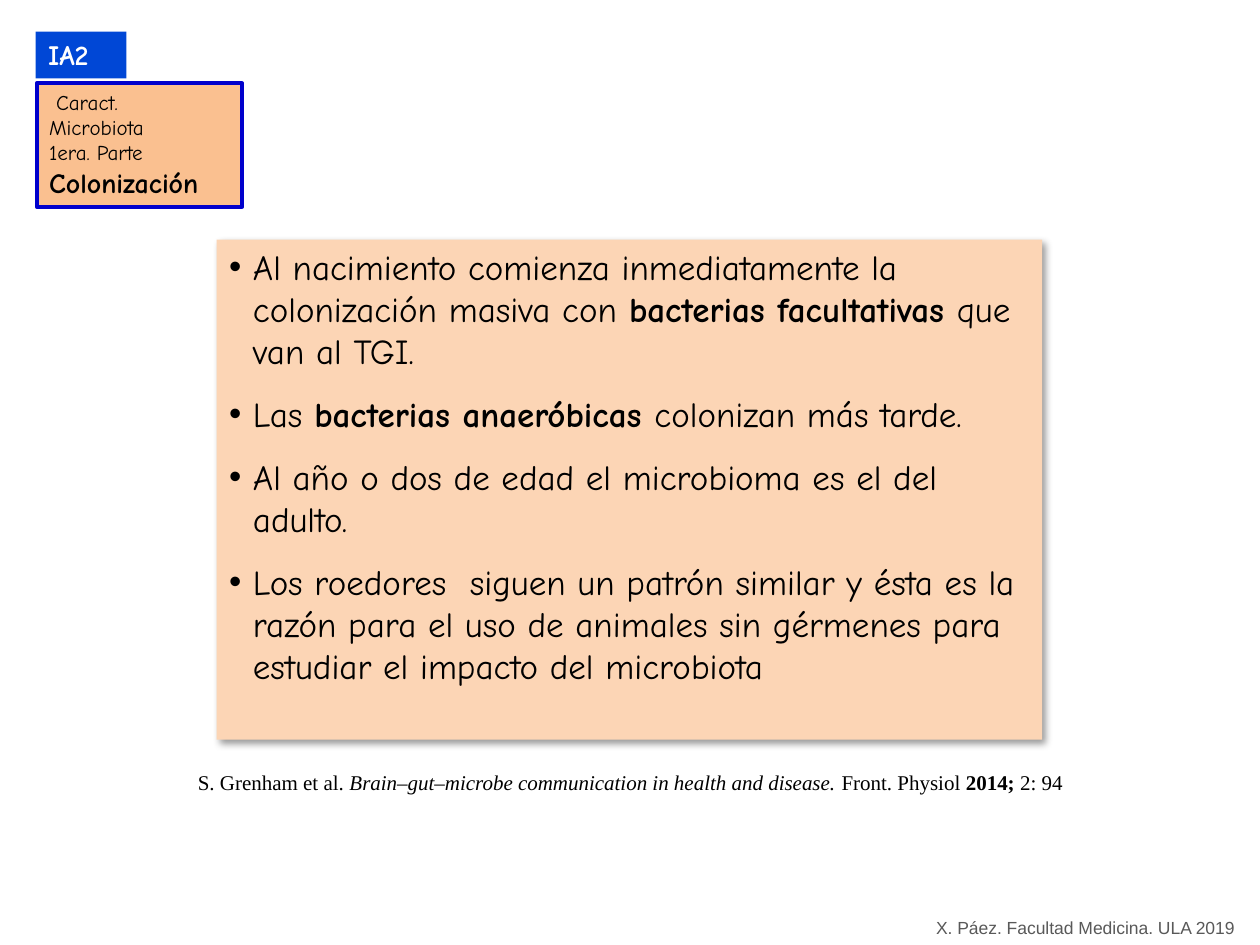
from lxml.etree import SubElement
from pptx import Presentation
from pptx.dml.color import RGBColor
from pptx.enum.shapes import MSO_SHAPE
from pptx.enum.text import MSO_ANCHOR, PP_ALIGN
from pptx.oxml.ns import qn
from pptx.util import Cm, Pt

COLORS = {
    "text": "000000",
    "white": "FFFFFF",
    "gray": "595959",
    "tag": "0047D6",
    "topic": "FAC090",
    "topic_line": "0000CC",
    "panel": "FCD5B5",
}
COMIC = "Comic Neue"


def rgb(name):
    """Return the named palette colour."""
    return RGBColor.from_string(COLORS[name])


def add_run(p, text, size, font=COMIC, color="text", bold=False, italic=False):
    """Append one formatted run to a paragraph."""
    r = p.add_run()
    r.text = text
    r.font.name, r.font.size = font, Pt(size)
    r.font.bold, r.font.italic = bold, italic
    r.font.color.rgb = rgb(color)


def add_rect(slide, box, fill, line=None):
    """Add a flat rectangle with left-aligned, top-anchored text."""
    sp = slide.shapes.add_shape(MSO_SHAPE.RECTANGLE, *map(Cm, box))
    sp.fill.solid()
    sp.fill.fore_color.rgb = rgb(fill)
    if line:
        sp.line.color.rgb = rgb(line)
        sp.line.width = Pt(2.25)
    else:
        sp.line.fill.background()
    sp.shadow.inherit = False
    sp.text_frame.vertical_anchor = MSO_ANCHOR.TOP
    sp.text_frame.word_wrap = True
    sp.text_frame.paragraphs[0].alignment = PP_ALIGN.LEFT
    return sp


def add_paragraphs(tf, count):
    """Return the given number of left-aligned paragraphs of a frame."""
    paragraphs = [tf.paragraphs[0]] + [tf.add_paragraph() for _ in range(count - 1)]
    for p in paragraphs:
        p.alignment = PP_ALIGN.LEFT
    return paragraphs


def add_shadow(sp):
    """Give a shape a soft shadow to the lower right."""
    effects = sp.element.spPr.find(qn("a:effectLst"))
    shadow = SubElement(effects, qn("a:outerShdw"), blurRad=str(Pt(4)),
                        dist=str(Pt(3)), dir="2700000", algn="tl", rotWithShape="0")
    color = SubElement(shadow, qn("a:srgbClr"), val=COLORS["text"])
    SubElement(color, qn("a:alpha"), val="40000")


def add_bullet(p):
    """Give a paragraph a hanging round bullet."""
    pPr = p._p.get_or_add_pPr()
    pPr.set("marL", str(Cm(0.48)))
    pPr.set("indent", str(-Cm(0.48)))
    SubElement(pPr, qn("a:buFont"), typeface="Arial")
    SubElement(pPr, qn("a:buChar"), char="•")


def add_header(slide, left, top):
    """Place the section tag and the topic box below it."""
    tag = add_rect(slide, (left, top, 1.83, 0.94), "tag")
    tag.text_frame.word_wrap = False
    add_run(tag.text_frame.paragraphs[0], "IA2", 16, color="white", bold=True)
    topic = add_rect(slide, (left + 0.02, top + 1.04, 4.14, 2.49), "topic", "topic_line")
    lines = [" Caract.", "Microbiota", "1era. Parte", "Colonización"]
    for p, text in zip(add_paragraphs(topic.text_frame, len(lines)), lines):
        last = text == lines[-1]
        add_run(p, text, 16 if last else 12, bold=last)


def add_panel(slide, box):
    """Place the main panel with its bulleted points."""
    points = [
        [("Al nacimiento comienza inmediatamente la colonización masiva con ", False),
         ("bacterias facultativas ", True), ("que van al TGI.", False)],
        [("Las ", False), ("bacterias anaeróbicas ", True),
         ("colonizan más tarde.", False)],
        [("Al año o dos de edad el microbioma es el del adulto.", False)],
        [("Los roedores  siguen un patrón similar y ésta es la razón para el uso de "
          "animales sin gérmenes para estudiar el impacto del microbiota", False)],
    ]
    panel = add_rect(slide, box, "panel")
    add_shadow(panel)
    for i, p in enumerate(add_paragraphs(panel.text_frame, len(points))):
        if i:
            p.space_before = Pt(12)
        add_bullet(p)
        for text, bold in points[i]:
            add_run(p, text, 20, bold=bold)


def add_citation(slide, box):
    """Place the centred literature reference."""
    tf = slide.shapes.add_textbox(*map(Cm, box)).text_frame
    tf.word_wrap = True
    p = tf.paragraphs[0]
    p.alignment = PP_ALIGN.CENTER
    for text, style in [
        ("S. Grenham et al. ", {}),
        ("Brain–gut–microbe communication in health and disease. ", {"italic": True}),
        ("Front. Physiol ", {}),
        ("2014; ", {"bold": True}),
        ("2: 94", {}),
    ]:
        add_run(p, text, 12, "Times New Roman", **style)


def add_credit(slide, box):
    """Place the author credit in the lower right corner."""
    tf = slide.shapes.add_textbox(*map(Cm, box)).text_frame
    tf.word_wrap = False
    add_run(tf.paragraphs[0], "X. Páez. Facultad Medicina. ULA 2019", 10, "Arial", "gray")


def main():
    """Build and save the slide."""
    prs = Presentation()
    prs.slide_width, prs.slide_height = Cm(25.4), Cm(19.05)
    slide = prs.slides.add_slide(prs.slide_layouts[6])
    add_citation(slide, (3.28, 15.39, 18.85, 0.76))
    add_panel(slide, (4.37, 4.83, 16.64, 10.08))
    add_credit(slide, (18.62, 18.36, 6.58, 0.69))
    add_header(slide, 0.72, 0.64)
    prs.save("out.pptx")


if __name__ == "__main__":
    main()
